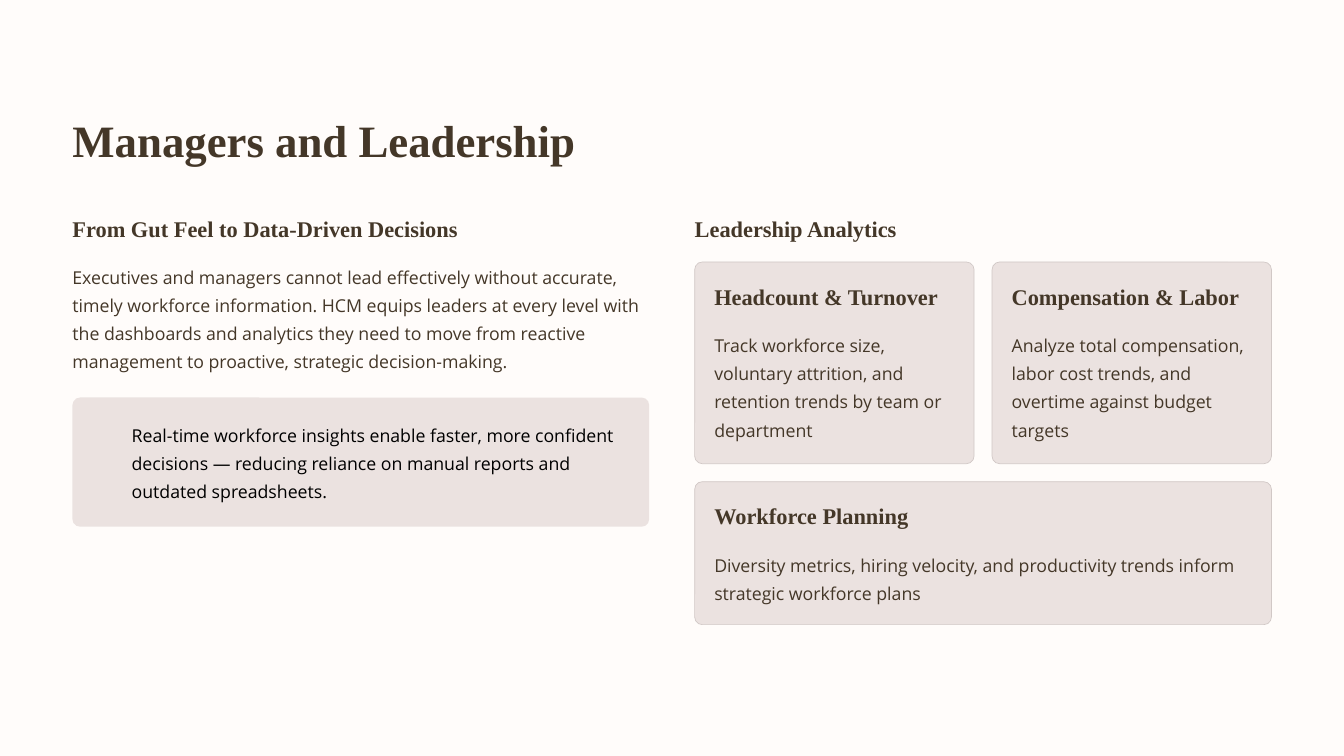
import pptx
import pptx.dml.color
import pptx.enum.shapes
import pptx.util

Cm = pptx.util.Cm
Pt = pptx.util.Pt

COLORS = {
    "background": "FFFCFA",
    "panel": "EBE2E0",
    "border": "D1C8C6",
    "brown": "443728",
    "black": "000000",
}
LEFT, RIGHT = 1.37, 13.13
COLUMN_W = 10.9
PAD = 0.37
GAP = 0.34
RADIUS = 0.145
HEADING_H = 0.53


def color(name):
    return pptx.dml.color.RGBColor.from_string(COLORS[name])


class Deck:
    """Holds the text and panel style and the slide being built."""

    def __init__(self, slide):
        self.slide = slide
        fill = slide.background.fill
        fill.solid()
        fill.fore_color.rgb = color("background")

    def text(self, x, y, w, h, text, size, font, spacing, ink="brown", bold=False, wrap=True):
        tf = self.slide.shapes.add_textbox(Cm(x), Cm(y), Cm(w), Cm(h)).text_frame
        tf.margin_left = tf.margin_right = tf.margin_top = tf.margin_bottom = 0
        tf.word_wrap = wrap
        p = tf.paragraphs[0]
        p.text = text
        p.line_spacing = spacing
        p.font.size = Pt(size)
        p.font.name = font
        p.font.bold = bold
        p.font.color.rgb = color(ink)

    def heading(self, x, y, w, text, size=12, h=HEADING_H):
        self.text(x, y, w, h, text, size, "Times New Roman", 1.04, bold=True, wrap=False)

    def body(self, x, y, w, h, text, ink="brown"):
        self.text(x, y, w, h, text, 9.5, "Open Sans", 1.33, ink)

    def panel(self, x, y, w, h, border=None):
        sp = self.slide.shapes.add_shape(
            pptx.enum.shapes.MSO_SHAPE.ROUNDED_RECTANGLE, Cm(x), Cm(y), Cm(w), Cm(h))
        sp.adjustments[0] = RADIUS / min(w, h)
        sp.shadow.inherit = False
        sp.fill.solid()
        sp.fill.fore_color.rgb = color("panel")
        if border:
            sp.line.color.rgb = color(border)
            sp.line.width = Pt(0.38)
        else:
            sp.line.fill.background()

    def card(self, x, y, w, h, title, text):
        """Bordered panel with a heading above body text."""
        inner_w = w - 2 * PAD
        self.panel(x, y, w, h, "border")
        self.heading(x + PAD, y + PAD, inner_w, title)
        self.body(x + PAD, y + 1.24, inner_w, h - 1.24 - PAD, text)


def main():
    prs = pptx.Presentation()
    prs.slide_width, prs.slide_height = Cm(25.4), Cm(14.28)
    deck = Deck(prs.slides.add_slide(prs.slide_layouts[6]))

    deck.heading(LEFT, 2.08, 22.64, "Managers and Leadership", size=24, h=1.07)

    deck.heading(LEFT, 4.04, COLUMN_W, "From Gut Feel to Data-Driven Decisions")
    deck.body(LEFT, 4.9, COLUMN_W, 2.2,
              "Executives and managers cannot lead effectively without accurate, timely "
              "workforce information. HCM equips leaders at every level with the dashboards "
              "and analytics they need to move from reactive management to proactive, "
              "strategic decision-making.")
    deck.panel(LEFT, 7.51, COLUMN_W, 2.44)
    deck.body(2.49, 7.89, 9.45, 1.65,
              "Real-time workforce insights enable faster, more confident decisions — "
              "reducing reliance on manual reports and outdated spreadsheets.", "black")

    deck.heading(RIGHT, 4.04, COLUMN_W, "Leadership Analytics")
    top, card_h = 4.95, 3.81
    card_w = (COLUMN_W - GAP) / 2
    cards = [
        ("Headcount & Turnover",
         "Track workforce size, voluntary attrition, and retention trends by team or department"),
        ("Compensation & Labor",
         "Analyze total compensation, labor cost trends, and overtime against budget targets"),
    ]
    for i, (title, text) in enumerate(cards):
        deck.card(RIGHT + i * (card_w + GAP), top, card_w, card_h, title, text)
    deck.card(RIGHT, top + card_h + GAP, COLUMN_W, 2.7, "Workforce Planning",
              "Diversity metrics, hiring velocity, and productivity trends inform "
              "strategic workforce plans")

    prs.save("out.pptx")


if __name__ == "__main__":
    main()
